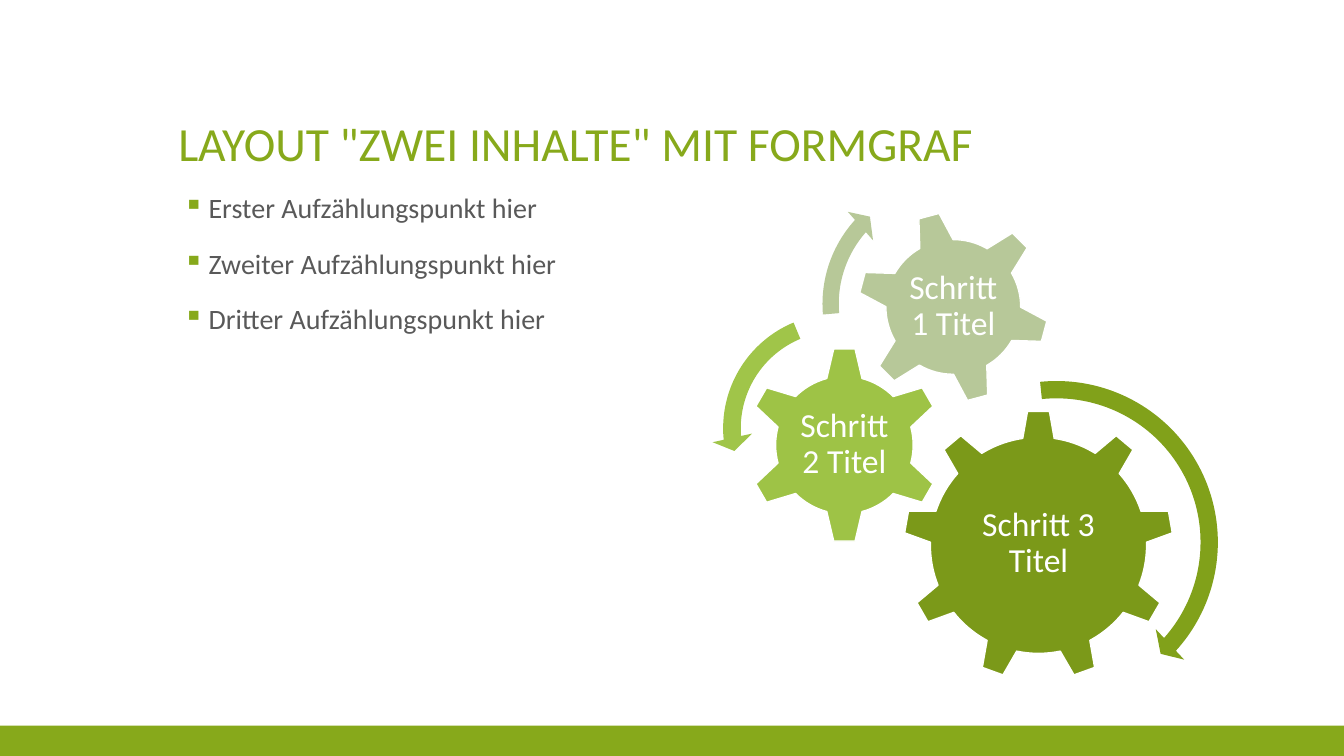
"""Slide with a bullet list and three interlocking step gears."""
from dataclasses import dataclass
from lxml import etree
from pptx import Presentation
from pptx.dml.color import RGBColor
from pptx.enum import shapes, text
from pptx.oxml import ns
from pptx.util import Inches, Pt


@dataclass(frozen=True)
class Theme:
    font: str = "Calibri"
    accent: str = "87A91B"
    body: str = "595959"
    white: str = "FFFFFF"
    gears: tuple = ("7B9919", "9EC346", "B7C899")
    arrows: tuple = ("81A11A", "A0C549", "B7C898")
    title_size: int = 34
    body_size: int = 20
    step_size: int = 24


theme = Theme()
kind = shapes.MSO_SHAPE
anchor = text.MSO_ANCHOR

deck = Presentation()
deck.slide_width, deck.slide_height = Inches(13.33), Inches(7.5)
slide = deck.slides.add_slide(deck.slide_layouts[6])


def add_shape(form, box, color):
    shape = slide.shapes.add_shape(form, *map(Inches, box))
    shape.shadow.inherit = False
    shape.fill.solid()
    shape.fill.fore_color.rgb = RGBColor.from_string(color)
    shape.line.fill.background()
    return shape


def add_text(words, box, size, color, place):
    frame = slide.shapes.add_textbox(*map(Inches, box)).text_frame
    frame.word_wrap = True
    frame.vertical_anchor = place
    frame.text = words
    for para in frame.paragraphs:
        para.line_spacing = 0.9
        for run in para.runs:
            run.font.name = theme.font
            run.font.size = Pt(size)
            run.font.color.rgb = RGBColor.from_string(color)
    return frame


add_shape(kind.RECTANGLE, (0, 7.2, 13.33, 0.3), theme.accent)
add_text('LAYOUT "ZWEI INHALTE" MIT FORMGRAF', (1.67, 0.5, 10, 1.25),
         theme.title_size, theme.accent, anchor.BOTTOM)

points = [f"{rank} Aufzählungspunkt hier" for rank in ("Erster", "Zweiter", "Dritter")]
body = add_text("\n".join(points), (1.67, 1.88, 4.92, 4.88),
                theme.body_size, theme.body, anchor.TOP)
for para in body.paragraphs:
    para.space_before = Pt(18)
    props = para._p.get_or_add_pPr()
    props.set("marL", str(Inches(0.3)))
    props.set("indent", str(Inches(-0.25)))
    tint = etree.SubElement(props, ns.qn("a:buClr"))
    etree.SubElement(tint, ns.qn("a:srgbClr"), val=theme.accent)
    etree.SubElement(props, ns.qn("a:buChar"), char="▪")

gears = [
    (kind.GEAR_9, (8.96, 4.07, 2.68, 2.68), 0, "Schritt 3 Titel", (9.5, 4.7, 1.6, 1.38)),
    (kind.GEAR_6, (7.4, 3.44, 1.95, 1.95), 0, "Schritt 2 Titel", (7.89, 3.93, 0.97, 0.96)),
    (kind.GEAR_6, (8.5, 2.09, 1.91, 1.91), 345, "Schritt 1 Titel", (8.92, 2.51, 1.07, 1.07)),
]
for (form, box, angle, words, label), color in zip(gears, theme.gears):
    gear = add_shape(form, box, color)
    gear.rotation = angle
    gear.line.color.rgb = RGBColor.from_string(theme.white)
    gear.line.width = Pt(1)
    frame = add_text(words, label, theme.step_size, theme.white, anchor.MIDDLE)
    frame.margin_left = frame.margin_right = Inches(0.03)
    frame.margin_top = frame.margin_bottom = Inches(0.03)
    frame.paragraphs[0].alignment = text.PP_ALIGN.CENTER

arrows = [
    (kind.CIRCULAR_ARROW, (8.76, 3.66, 3.44, 3.44), (0.05, 2.99, 25.22, 158.48, 0.06)),
    (kind.LEFT_CIRCULAR_ARROW, (7.06, 3, 2.5, 2.5), (0.07, 4.3, 104.89, 148.38, 0.08)),
    (kind.CIRCULAR_ARROW, (8.05, 1.67, 2.69, 2.69), (0.06, 3.94, 133.14, 105.08, 0.07)),
]
for (form, box, bends), color in zip(arrows, theme.arrows):
    arrow = add_shape(form, box, color)
    for spot, bend in enumerate(bends):
        arrow.adjustments[spot] = bend

deck.save("out.pptx")
